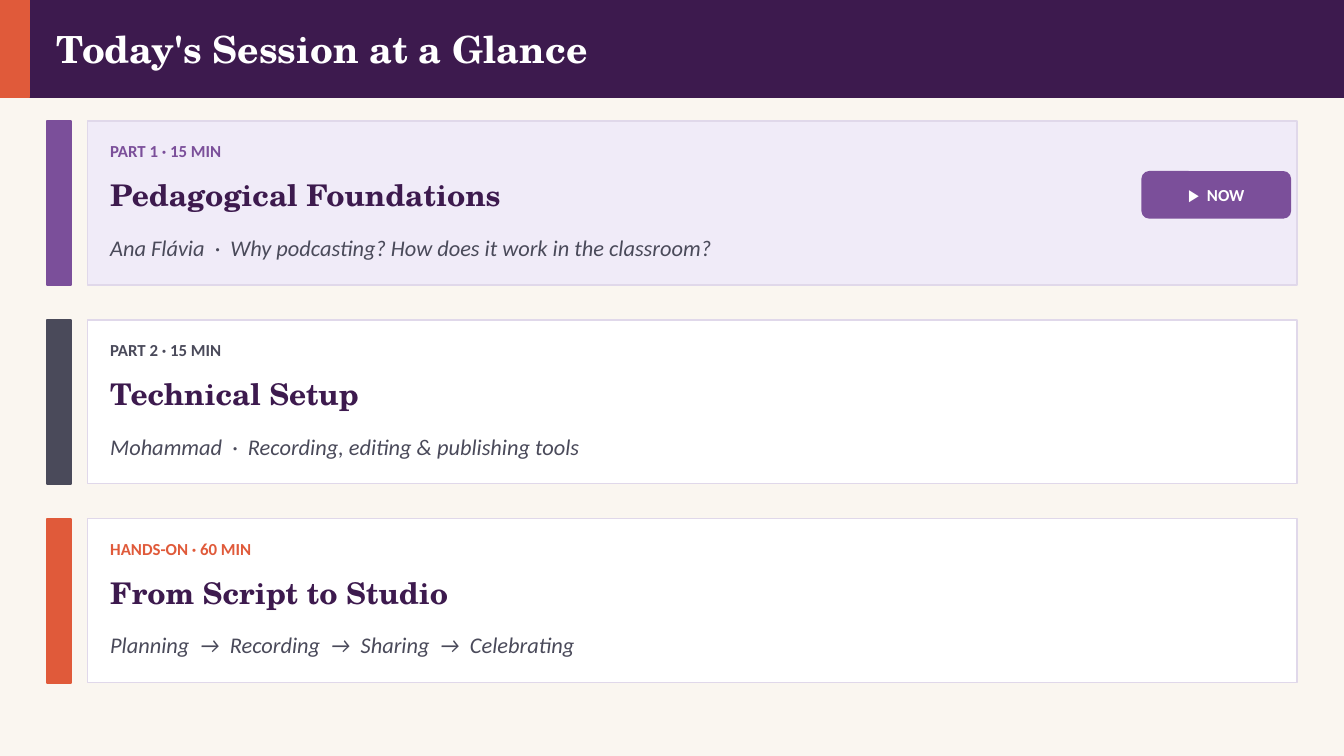
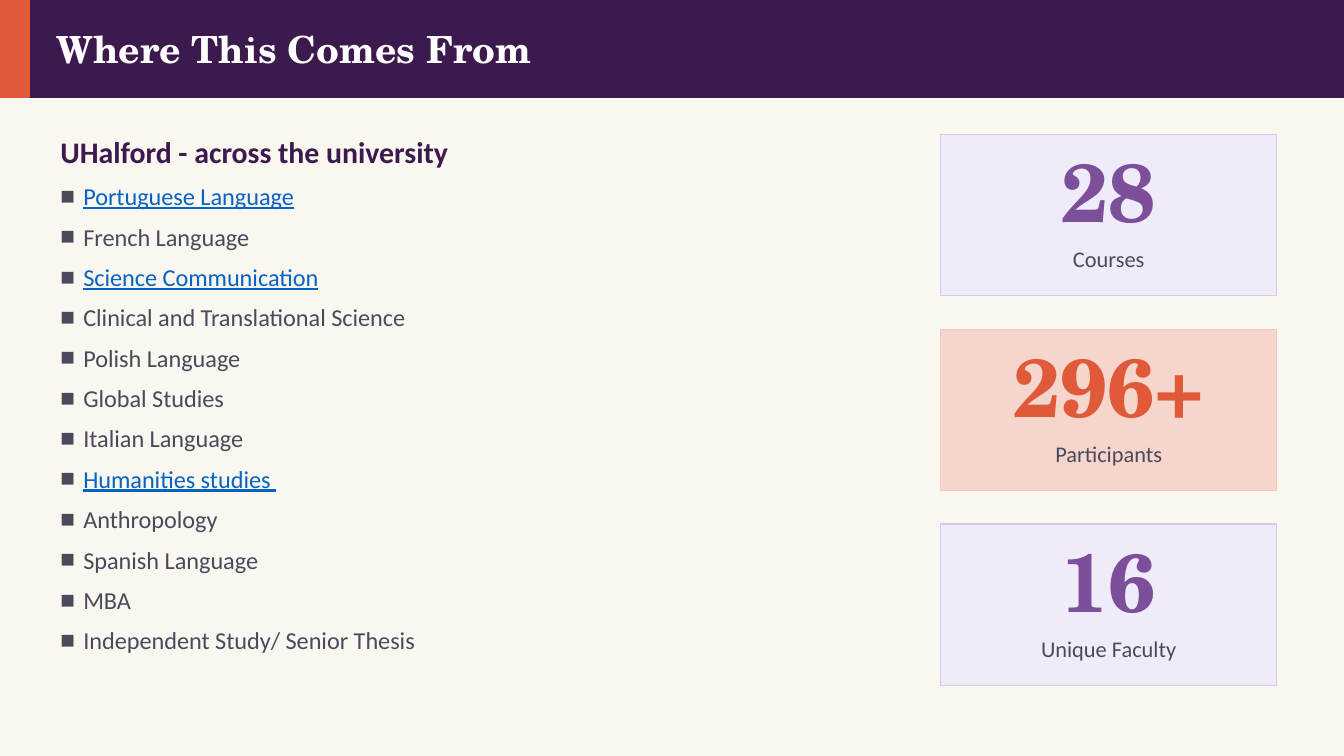
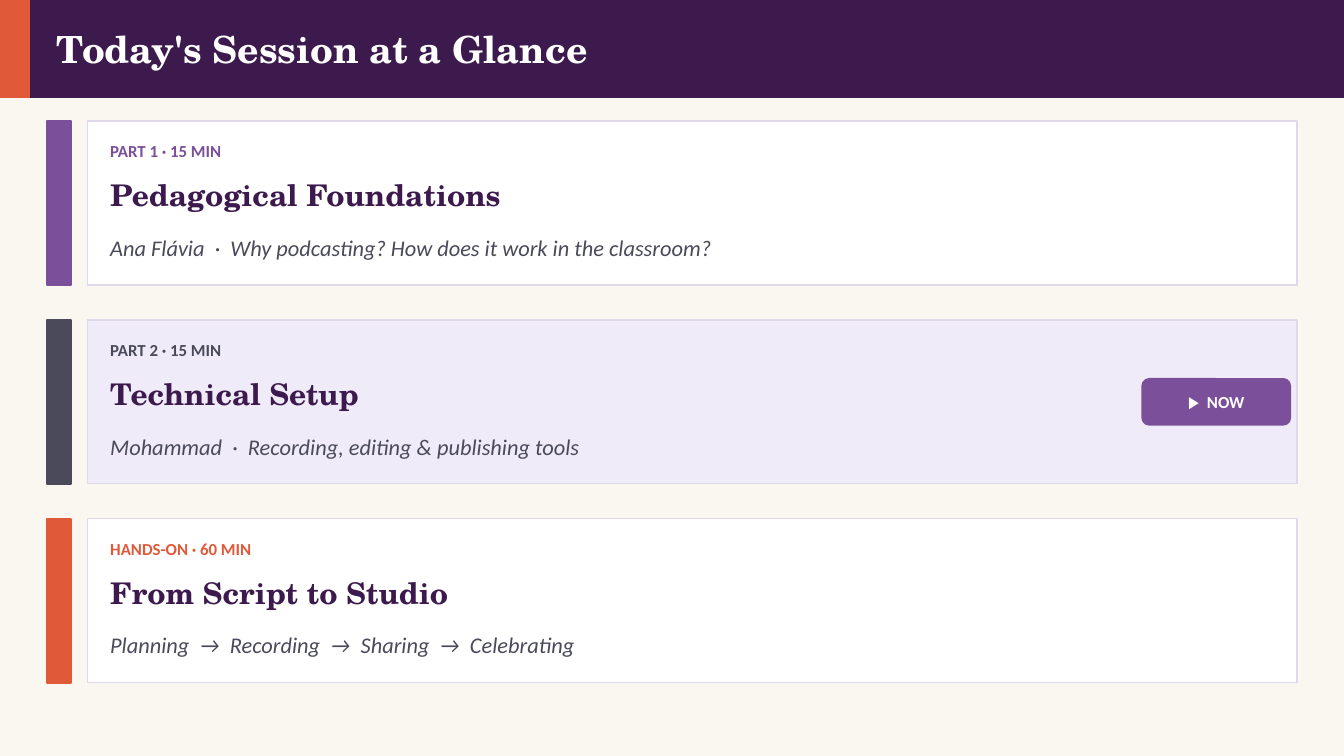
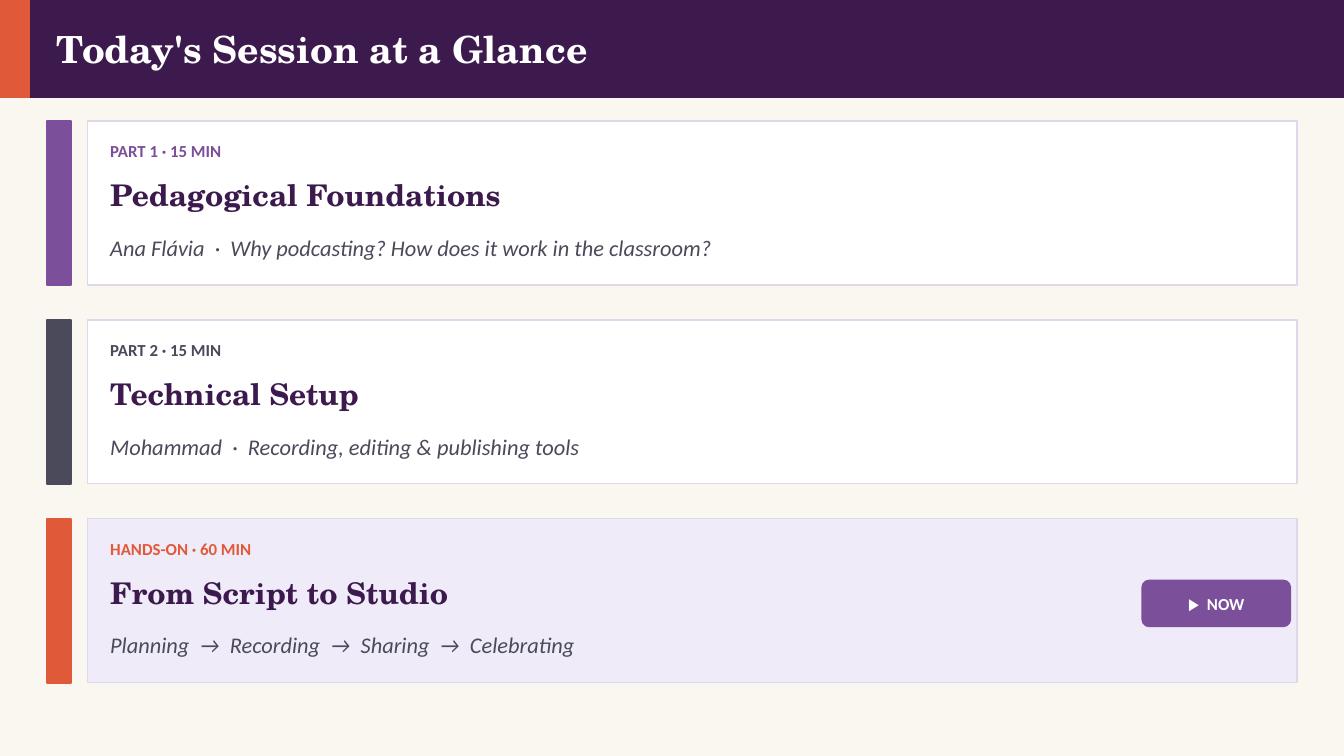
from dataclasses import dataclass

from lxml import etree
from pptx import Presentation
from pptx.dml.color import RGBColor
from pptx.enum.shapes import MSO_SHAPE
from pptx.enum.text import MSO_ANCHOR, PP_ALIGN
from pptx.oxml.ns import qn
from pptx.util import Inches, Pt

RECTANGLE = MSO_SHAPE.RECTANGLE
ROUNDED = MSO_SHAPE.ROUNDED_RECTANGLE
TOP, MIDDLE = MSO_ANCHOR.TOP, MSO_ANCHOR.MIDDLE
LEFT, CENTER = PP_ALIGN.LEFT, PP_ALIGN.CENTER
BLANK_LAYOUT = 6


@dataclass(frozen=True)
class Theme:
    page: str = "FAF6F0"
    plum: str = "3D1A4E"
    purple: str = "7B4F9A"
    orange: str = "E05A3A"
    slate: str = "4A4A5A"
    white: str = "FFFFFF"
    lilac: str = "F0EBF8"
    card_edge: str = "E0D8EA"
    lilac_edge: str = "D8C8ED"
    peach: str = "F5D5CC"
    peach_edge: str = "F0C8BC"
    link: str = "0563C1"
    serif: str = "TeX Gyre Schola"
    sans: str = "Calibri"
    bullet: str = "Arial"
    title_size: int = 20
    heading_size: int = 16
    list_size: int = 13
    body_size: int = 12
    label_size: int = 9
    stat_size: int = 44
    thin_line: float = 0.75
    solid_line: float = 1


THEME = Theme()

SESSION_TITLE = "Today's Session at a Glance"
# Label, heading, detail, accent colour, top of the NOW badge
SESSION_PARTS = [
    ("PART 1 · 15 MIN", "Pedagogical Foundations",
     "Ana Flávia  ·  Why podcasting? How does it work in the classroom?",
     THEME.purple, 1.28),
    ("PART 2 · 15 MIN", "Technical Setup",
     "Mohammad  ·  Recording, editing & publishing tools",
     THEME.slate, 2.82),
    ("HANDS-ON · 60 MIN", "From Script to Studio",
     "Planning  →  Recording  →  Sharing  →  Celebrating",
     THEME.orange, 4.32),
]
PART_TOP, PART_STEP, PART_HEIGHT = 0.9, 1.48, 1.22

# Subject, whether it is styled as a link
SUBJECTS = [
    ("Portuguese Language", True),
    ("French Language", False),
    ("Science Communication", True),
    ("Clinical and Translational Science", False),
    ("Polish Language", False),
    ("Global Studies", False),
    ("Italian Language", False),
    ("Humanities studies ", True),
    ("Anthropology", False),
    ("Spanish Language", False),
    ("MBA", False),
    ("Independent Study/ Senior Thesis", False),
]

# Number, caption, number colour, fill, edge
STATS = [
    ("28", "Courses", THEME.purple, THEME.lilac, THEME.lilac_edge),
    ("296+", "Participants", THEME.orange, THEME.peach, THEME.peach_edge),
    ("16", "Unique Faculty", THEME.purple, THEME.lilac, THEME.lilac_edge),
]
STAT_LEFT, STAT_WIDTH = 7, 2.5
STAT_TOP, STAT_STEP, STAT_HEIGHT = 1, 1.45, 1.2


def rgb(color):
    return RGBColor.from_string(color)


def add_block(page, left, top, width, height, fill, edge=None, kind=RECTANGLE):
    """Add a filled shape; without an edge colour its line matches the fill."""
    block = page.shapes.add_shape(
        kind, Inches(left), Inches(top), Inches(width), Inches(height))
    block.shadow.inherit = False
    block.fill.solid()
    block.fill.fore_color.rgb = rgb(fill)
    block.line.color.rgb = rgb(edge or fill)
    block.line.width = Pt(THEME.thin_line if edge else THEME.solid_line)
    return block


def add_frame(page, left, top, width, height, anchor=MIDDLE):
    """Add a wrapping text box without margins and return its text frame."""
    box = page.shapes.add_textbox(
        Inches(left), Inches(top), Inches(width), Inches(height))
    frame = box.text_frame
    frame.word_wrap = True
    frame.vertical_anchor = anchor
    frame.margin_left = frame.margin_right = 0
    frame.margin_top = frame.margin_bottom = 0
    return frame


def add_span(para, text, size, color, font=THEME.sans,
             bold=False, italic=False, underline=False):
    span = para.add_run()
    span.text = text
    span.font.size = Pt(size)
    span.font.name = font
    span.font.color.rgb = rgb(color)
    span.font.bold = bold
    span.font.italic = italic
    span.font.underline = underline


def add_line_of_text(page, left, top, width, height, text, size, color,
                     align=LEFT, **style):
    para = add_frame(page, left, top, width, height).paragraphs[0]
    para.alignment = align
    add_span(para, text, size, color, **style)


def set_square_bullet(para, color, indent):
    properties = para._p.get_or_add_pPr()
    properties.set("marL", str(Inches(indent)))
    properties.set("indent", str(-Inches(indent)))
    bullet_color = etree.SubElement(properties, qn("a:buClr"))
    etree.SubElement(bullet_color, qn("a:srgbClr")).set("val", color)
    etree.SubElement(properties, qn("a:buFont")).set("typeface", THEME.bullet)
    etree.SubElement(properties, qn("a:buChar")).set("char", "■")


def add_page(deck, title):
    """Add a page with the shared background, title band and title."""
    page = deck.slides.add_slide(deck.slide_layouts[BLANK_LAYOUT])
    page.background.fill.solid()
    page.background.fill.fore_color.rgb = rgb(THEME.page)
    add_block(page, 0, 0, 10, 0.72, THEME.plum)
    add_block(page, 0, 0, 0.22, 0.72, THEME.orange)
    add_line_of_text(page, 0.42, 0, 9.3, 0.72, title, THEME.title_size,
                     THEME.white, font=THEME.serif, bold=True)
    return page


def add_session_part(page, top, label, heading, detail, accent, is_current):
    add_block(page, 0.35, top, 0.18, PART_HEIGHT, accent)
    add_block(page, 0.65, top, 9, PART_HEIGHT,
              THEME.lilac if is_current else THEME.white, THEME.card_edge)
    add_line_of_text(page, 0.82, top + 0.08, 3, 0.28, label,
                     THEME.label_size, accent, bold=True)
    add_line_of_text(page, 0.82, top + 0.34, 8, 0.42, heading,
                     THEME.heading_size, THEME.plum,
                     font=THEME.serif, bold=True)
    add_line_of_text(page, 0.82, top + 0.76, 8, 0.36, detail,
                     THEME.body_size, THEME.slate, italic=True)


def add_now_badge(page, top):
    area = (8.5, top, 1.1, 0.34)
    badge = add_block(page, *area, THEME.purple, kind=ROUNDED)
    badge.adjustments[0] = 0.15
    add_line_of_text(page, *area, "▶  NOW", THEME.label_size, THEME.white,
                     align=CENTER, bold=True)


def add_session_page(deck, current):
    """Add the session overview with the part at index current marked."""
    page = add_page(deck, SESSION_TITLE)
    for index, (*content, badge_top) in enumerate(SESSION_PARTS):
        is_current = index == current
        add_session_part(page, PART_TOP + index * PART_STEP, *content,
                         is_current)
        if is_current:
            add_now_badge(page, badge_top)


def add_subject_list(page):
    frame = add_frame(page, 0.45, 1.35, 5.8, 4.14, anchor=TOP)
    for index, (subject, is_link) in enumerate(SUBJECTS):
        para = frame.add_paragraph() if index else frame.paragraphs[0]
        para.space_before = Pt(6)
        set_square_bullet(para, THEME.slate, 0.17)
        add_span(para, subject, THEME.list_size,
                 THEME.link if is_link else THEME.slate, underline=is_link)


def add_stat_card(page, top, number, caption, color, fill, edge):
    add_block(page, STAT_LEFT, top, STAT_WIDTH, STAT_HEIGHT, fill, edge)
    add_line_of_text(page, STAT_LEFT, top + 0.05, STAT_WIDTH, 0.72, number,
                     THEME.stat_size, color, align=CENTER,
                     font=THEME.serif, bold=True)
    add_line_of_text(page, STAT_LEFT, top + 0.75, STAT_WIDTH, 0.35, caption,
                     THEME.body_size, THEME.slate, align=CENTER)


def add_origin_page(deck):
    page = add_page(deck, "Where This Comes From")
    add_line_of_text(page, 0.45, 0.9, 5.8, 0.45,
                     "UHalford - across the university",
                     THEME.heading_size, THEME.plum, bold=True)
    add_subject_list(page)
    for index, stat in enumerate(STATS):
        add_stat_card(page, STAT_TOP + index * STAT_STEP, *stat)


def main():
    deck = Presentation()
    deck.slide_width = Inches(10)
    deck.slide_height = Inches(10 * 9 / 16)
    add_session_page(deck, current=0)
    add_origin_page(deck)
    add_session_page(deck, current=1)
    add_session_page(deck, current=2)
    deck.save("out.pptx")


if __name__ == "__main__":
    main()
